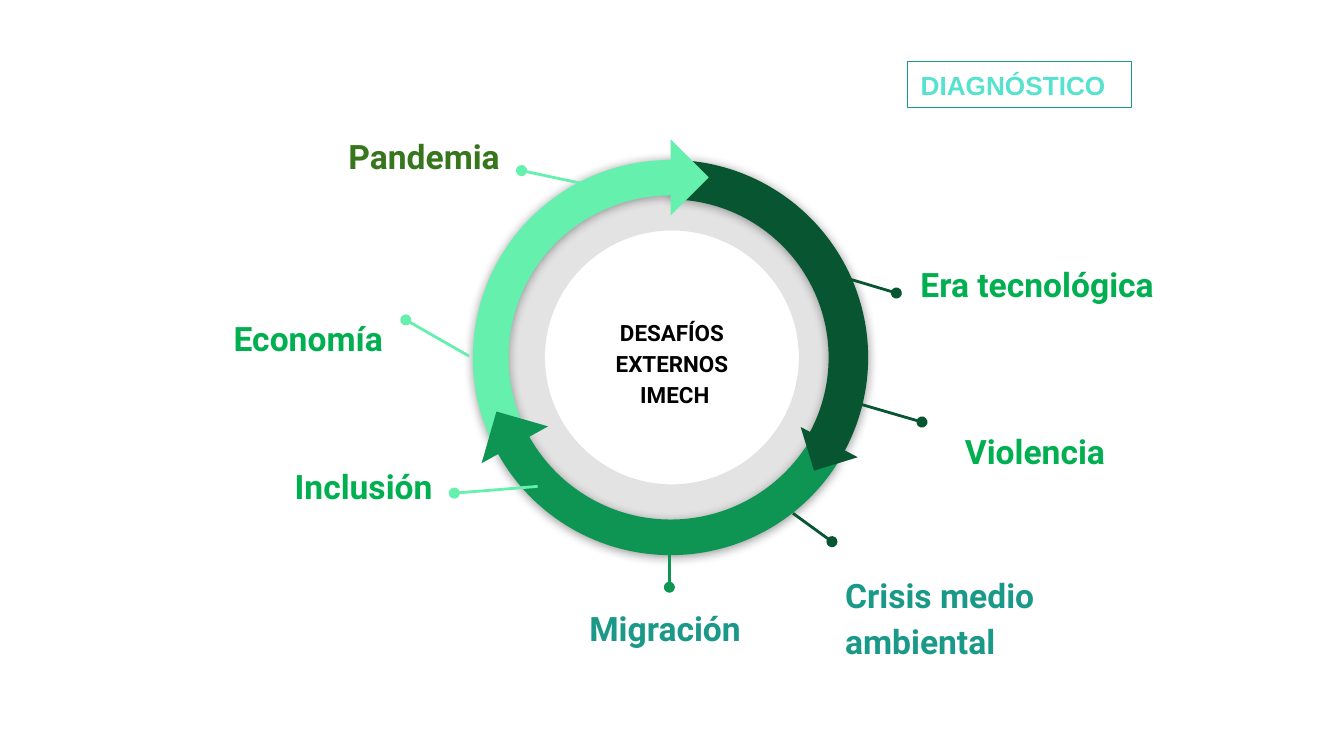
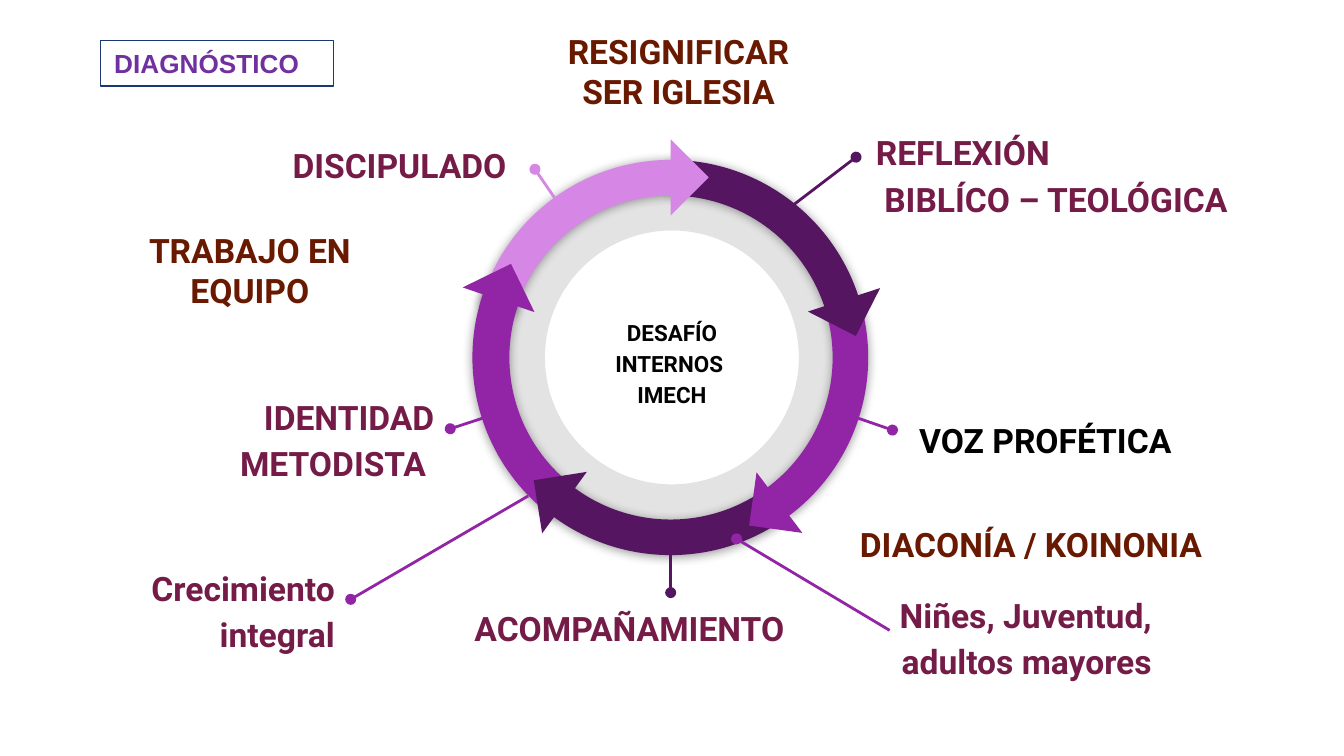
from lxml import etree
from pptx import Presentation
from pptx.dml.color import RGBColor
from pptx.enum.shapes import MSO_CONNECTOR, MSO_SHAPE
from pptx.enum.text import MSO_ANCHOR, MSO_AUTO_SIZE, PP_ALIGN
from pptx.oxml.ns import qn
from pptx.util import Pt

DONUT = MSO_SHAPE.DONUT
BLOCK_ARC = MSO_SHAPE.BLOCK_ARC
TRIANGLE = MSO_SHAPE.RIGHT_TRIANGLE
STRAIGHT = MSO_CONNECTOR.STRAIGHT
LEFT, CENTER, RIGHT = PP_ALIGN.LEFT, PP_ALIGN.CENTER, PP_ALIGN.RIGHT
TOP, MIDDLE = MSO_ANCHOR.TOP, MSO_ANCHOR.MIDDLE
GROW = MSO_AUTO_SIZE.SHAPE_TO_FIT_TEXT
FIXED = MSO_AUTO_SIZE.NONE

TITLE_ONLY = 5
BLACK, WHITE = "000000", "FFFFFF"
DARK_GREEN, GREEN, MINT = "085631", "0E9453", "65F0AD"
LEAF, TEAL, MOSS = "00B050", "1A9988", "38761D"
PLUM, PURPLE, LILAC = "551561", "9225A5", "D686E4"
WINE, BROWN = "741B47", "681900"

RING_FRAME = (260, 91.5, 200, 200)
ARC_FRAME = (253.4, 85.7, 211.7, 211.7)
CENTER_FRAME = (303.1, 162, 113.8, 63.4)
LABEL_HEIGHT = 52.6
TIP = 28.8

EXTERNAL = {
    "title": ((486, 33.1, 120.2, 24.5), "55E2CF", TEAL),
    "center": (["DESAFÍOS EXTERNOS", " IMECH"], BLACK),
    "arcs": [
        (30, False, 240.24, 0.01, 0.1, DARK_GREEN, None),
        (330, True, 239.14, 357.88, 0.09, MINT, None),
        (210, True, 238.6, 358.38, 0.09, GREEN, None),
    ],
    "tips": [
        (344.9, 80.6, TIP, 225, MINT),
        (432, 224.6, 24.5, 342.9, DARK_GREEN),
        (261.4, 223.9, TIP, 106, GREEN),
    ],
    "pointers": [
        (217.4, 171.4, 251.3, 190.8, MINT),
        (358.6, 314.6, 358.6, 278.6, GREEN),
        (243.4, 264.2, 288, 260.6, MINT),
        (279.4, 91.4, 313.2, 98.6, MINT),
        (493.9, 226.1, 454.3, 214.6, DARK_GREEN),
        (445.7, 290.2, 424.8, 275, DARK_GREEN),
        (480.2, 157, 441.4, 145.4, DARK_GREEN),
    ],
    "labels": [
        (["Economía "], (76.3, 159.8, 140.4, LABEL_HEIGHT), LEAF, RIGHT),
        (["Migración "], (299.5, 315.4, 118.1, LABEL_HEIGHT), TEAL, CENTER),
        (["Inclusión "], (84.2, 239, 159.1, LABEL_HEIGHT), LEAF, RIGHT),
        (["Pandemia "], (97.2, 62.6, 182.2, 18.7), MOSS, RIGHT),
        (["Crisis medio ambiental"], (445.7, 297.4, 188.6, LABEL_HEIGHT), TEAL, LEFT),
        (["Era tecnológica"], (486, 131, 155.5, LABEL_HEIGHT), LEAF, LEFT),
        (["Violencia"], (509.8, 220.3, 155.5, LABEL_HEIGHT), LEAF, LEFT),
    ],
    "headings": [],
}

INTERNAL = {
    "title": ((54, 21.6, 124.6, 24.5), "7030A0", "1C3678"),
    "center": (["DESAFÍO INTERNOS ", "IMECH"], "020202"),
    "arcs": [
        (30, False, 240.24, 316.64, 0.09, PLUM, None),
        (210, True, 336.31, 43.73, 0.09, PURPLE, None),
        (330, True, 238.9, 314.25, 0.09, LILAC, None),
        (150, False, 336.41, 50.12, 0.09, PURPLE, PURPLE),
        (210, True, 262.31, 333.47, 0.09, PLUM, None),
    ],
    "tips": [
        (437.8, 146.2, TIP, 297, PLUM),
        (252.7, 146.2, TIP, 154, PURPLE),
        (403.2, 254.9, TIP, 7.9, PURPLE),
        (288, 254.9, TIP, 81, PLUM),
        (344.9, 80.6, TIP, 225, LILAC),
    ],
    "pointers": [
        (458.6, 84.2, 419.8, 113.8, PLUM),
        (286.6, 90.7, 307.4, 121, LILAC),
        (478.1, 230.4, 442.8, 218.2, PURPLE),
        (241.2, 229.7, 276.5, 218.2, PURPLE),
        (359.3, 317.5, 359.3, 278.6, PLUM),
        (187.9, 321.1, 283, 265.7, PURPLE),
        (394.6, 288.7, 476.6, 337.7, PURPLE),
    ],
    "labels": [
        (["REFLEXIÓN", " BIBLÍCO – TEOLÓGICA"], (462.2, 60.5, 213.1, LABEL_HEIGHT), WINE, LEFT),
        (["DISCIPULADO "], (74.9, 67, 208.1, LABEL_HEIGHT), WINE, RIGHT),
        (["VOZ PROFÉTICA"], (485.3, 214.6, 153.4, LABEL_HEIGHT), BLACK, LEFT),
        (["IDENTIDAD METODISTA "], (74.2, 202.3, 165.6, LABEL_HEIGHT), WINE, RIGHT),
        (["ACOMPAÑAMIENTO "], (224.6, 315.4, 229.7, LABEL_HEIGHT), WINE, CENTER),
        (["Crecimiento integral"], (20.9, 293.8, 165.6, LABEL_HEIGHT), WINE, RIGHT),
        (["Niñes, Juventud, adultos mayores"], (458.6, 308.2, 165.6, LABEL_HEIGHT), WINE, RIGHT),
    ],
    "headings": [
        (["TRABAJO EN EQUIPO"], (51.1, 119.5, 165.6, 51.1), BROWN, CENTER),
        (["DIACONÍA / KOINONIA"], (453.6, 277.2, 249.1, 28.8), BROWN, LEFT),
        (["RESIGNIFICAR ", "SER IGLESIA "], (241.2, 13, 249.1, 51.1), BROWN, CENTER),
    ],
}


def colour(value):
    return RGBColor.from_string(value)


def points(values):
    return [Pt(value) for value in values]


def add_child(parent, tag, **attributes):
    return etree.SubElement(parent, qn(tag), {key: str(value) for key, value in attributes.items()})


def write_text(box, lines, text_colour, align, size=18, font="Roboto", spacing=1.0,
               inset=3.6, anchor=TOP, fit=FIXED):
    frame = box.text_frame
    frame.word_wrap = True
    frame.auto_size = fit
    frame.vertical_anchor = anchor
    frame.margin_left = frame.margin_right = Pt(7.2)
    frame.margin_top = frame.margin_bottom = Pt(inset)
    for index, line in enumerate(lines):
        para = frame.add_paragraph() if index else frame.paragraphs[0]
        para.alignment = align
        para.line_spacing = spacing
        span = para.add_run()
        span.text = line
        span.font.name = font
        span.font.size = Pt(size)
        span.font.bold = True
        span.font.color.rgb = colour(text_colour)


def add_label(page, lines, place, text_colour, align, **style):
    box = page.shapes.add_textbox(*points(place))
    write_text(box, lines, text_colour, align, **style)


def add_title(page, place, text_colour, border):
    title = page.shapes.title
    title.left, title.top, title.width, title.height = points(place)
    title.line.color.rgb = colour(border)
    title.line.width = Pt(0.75)
    write_text(title, ["DIAGNÓSTICO"], text_colour, LEFT, size=14, font="Arial",
               anchor=MIDDLE)


def add_solid(page, kind, place, fill, rotation=0, outline=None):
    shape = page.shapes.add_shape(kind, *points(place))
    shape.shadow.inherit = False
    shape.rotation = rotation
    shape.fill.solid()
    shape.fill.fore_color.rgb = colour(fill)
    if outline:
        shape.line.color.rgb = colour(outline)
        shape.line.width = Pt(0.75)
    else:
        shape.line.fill.background()
    return shape


def add_ring(page):
    ring = add_solid(page, DONUT, RING_FRAME, BLACK)
    ring.adjustments[0] = 0.16
    tint = ring.element.spPr.find(qn("a:solidFill"))[0]
    add_child(tint, "a:alpha", val=11000)


def add_arc(page, rotation, flipped, start, end, thickness, fill, outline):
    arc = add_solid(page, BLOCK_ARC, ARC_FRAME, fill, rotation, outline)
    arc.adjustments[0] = start * 0.6
    arc.adjustments[1] = end * 0.6
    arc.adjustments[2] = thickness
    properties = arc.element.spPr
    if flipped:
        properties.find(qn("a:xfrm")).set("flipH", "1")
    effects = properties.find(qn("a:effectLst"))
    shadow = add_child(effects, "a:outerShdw", blurRad=Pt(5.6), dist=Pt(0.8),
                       dir=5400000, rotWithShape=0)
    add_child(add_child(shadow, "a:srgbClr", val=BLACK), "a:alpha", val=40000)


def add_pointer(page, x1, y1, x2, y2, line_colour):
    pointer = page.shapes.add_connector(STRAIGHT, *points((x1, y1, x2, y2)))
    pointer.line.color.rgb = colour(line_colour)
    pointer.line.width = Pt(1.5)
    properties = pointer.element.spPr
    add_child(properties.find(qn("a:ln")), "a:headEnd", type="oval")
    add_child(properties, "a:effectLst")


def add_cycle_page(deck, content):
    page = deck.slides.add_slide(deck.slide_layouts[TITLE_ONLY])
    page.background.fill.solid()
    page.background.fill.fore_color.rgb = colour(WHITE)
    add_title(page, *content["title"])
    add_ring(page)
    for arc in content["arcs"]:
        add_arc(page, *arc)
    for left, top, size, rotation, fill in content["tips"]:
        add_solid(page, TRIANGLE, (left, top, size, size), fill, rotation)
    lines, text_colour = content["center"]
    add_label(page, lines, CENTER_FRAME, text_colour, CENTER, size=12, spacing=1.15,
              inset=7.2, anchor=MIDDLE)
    for pointer in content["pointers"]:
        add_pointer(page, *pointer)
    for label in content["labels"]:
        add_label(page, *label, spacing=1.15, inset=7.2)
    for heading in content["headings"]:
        add_label(page, *heading, fit=GROW)


def main():
    deck = Presentation()
    deck.slide_width, deck.slide_height = Pt(720), Pt(405)
    for content in (EXTERNAL, INTERNAL):
        add_cycle_page(deck, content)
    deck.save("out.pptx")


if __name__ == "__main__":
    main()
